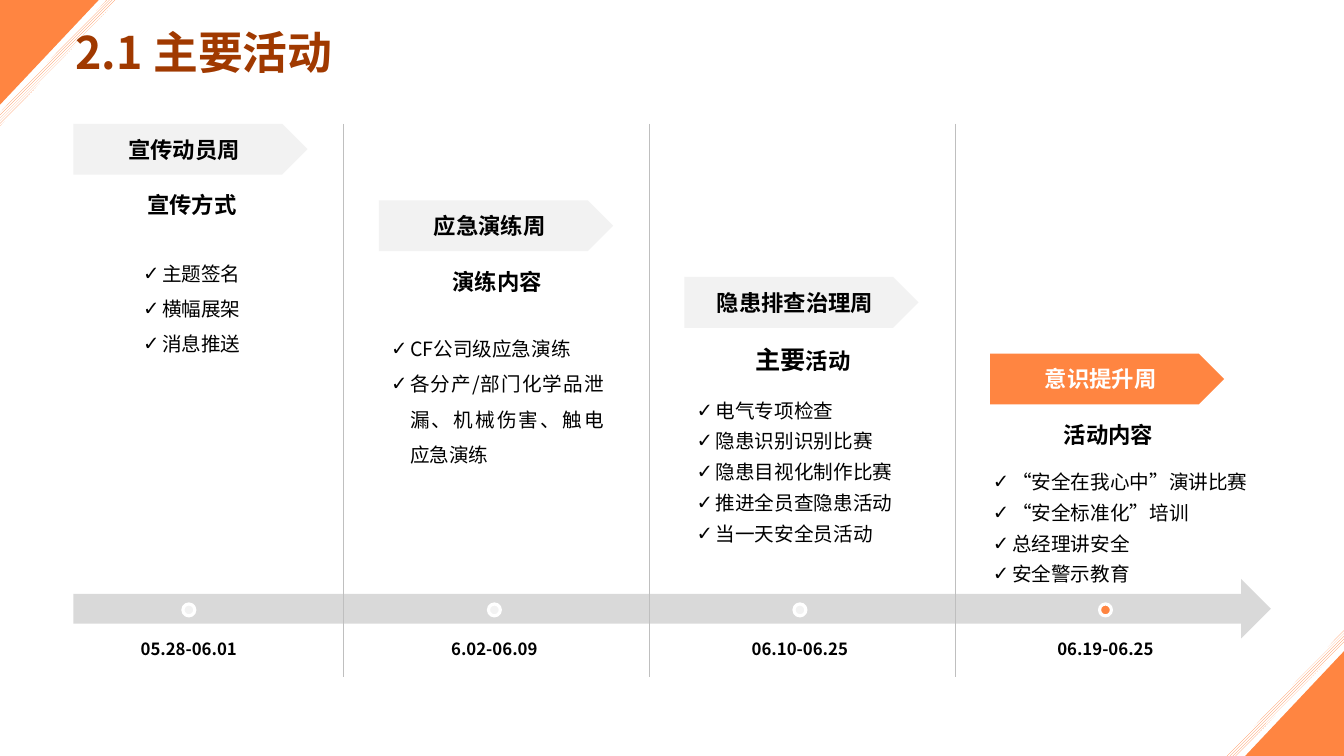
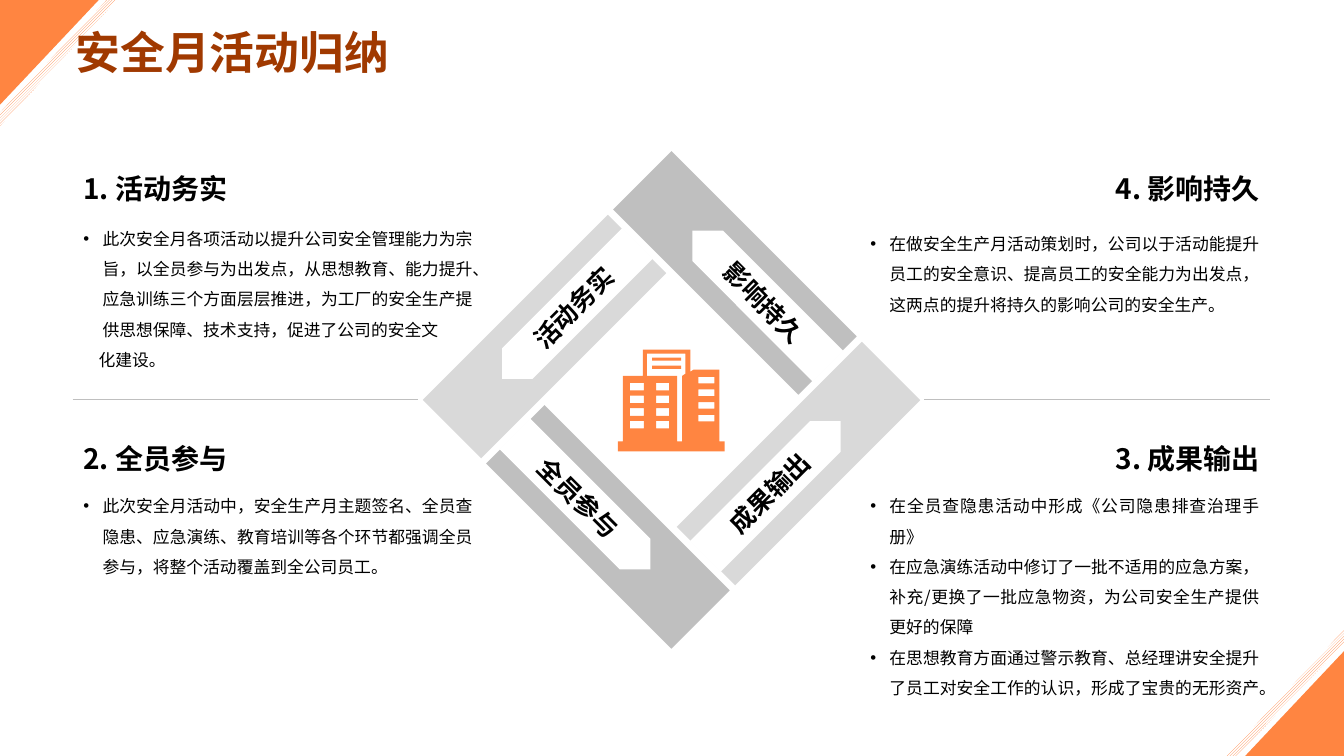
from collections import namedtuple

from lxml import etree
from pptx import Presentation
from pptx.dml.color import RGBColor
from pptx.enum.dml import MSO_PATTERN
from pptx.enum.shapes import MSO_CONNECTOR, MSO_SHAPE
from pptx.enum.text import MSO_ANCHOR, MSO_AUTO_SIZE, PP_ALIGN
from pptx.oxml.ns import qn
from pptx.util import Cm, Pt

LEFT, CENTER, RIGHT, JUSTIFY = (
    PP_ALIGN.LEFT, PP_ALIGN.CENTER, PP_ALIGN.RIGHT, PP_ALIGN.JUSTIFY)
TOP, MIDDLE = MSO_ANCHOR.TOP, MSO_ANCHOR.MIDDLE
RECTANGLE, OVAL = MSO_SHAPE.RECTANGLE, MSO_SHAPE.OVAL
TAG, RIGHT_ARROW = MSO_SHAPE.PENTAGON, MSO_SHAPE.RIGHT_ARROW
STRAIGHT = MSO_CONNECTOR.STRAIGHT
STRIPES = MSO_PATTERN.LIGHT_UPWARD_DIAGONAL

FONT = "Noto Sans CJK SC"
ORANGE, RUST = "FF8541", "A03900"
BLACK, WHITE = "000000", "FFFFFF"
PALE, LIGHT, MID = "F2F2F2", "D9D9D9", "BFBFBF"
SLIDE_W, SLIDE_H = 33.87, 19.05
MARGIN = 1.85
COMPARISON_LAYOUT = 4
HANGING = 0.48

Week = namedtuple("Week", "name dates subhead items list_dx list_dy list_w align spacing")
WEEKS = [
    Week("宣传动员周", "05.28-06.01", [("宣传方式", 16)],
         ["主题签名", "横幅展架", "消息推送"],
         0.05, 3.05, 5.87, CENTER, 1.5),
    Week("应急演练周", "6.02-06.09", [("演练内容", 16)],
         ["CF公司级应急演练", "各分产/部门化学品泄漏、机械伤害、触电应急演练"],
         0.05, 3.02, 5.87, JUSTIFY, 1.5),
    Week("隐患排查治理周", "06.10-06.25", [("主要", 18), ("活动", 16)],
         ["电气专项检查", "隐患识别识别比赛", "隐患目视化制作比赛",
          "推进全员查隐患活动", "当一天安全员活动"],
         0.05, 2.75, 5.87, JUSTIFY, Pt(22)),
    Week("意识提升周", "06.19-06.25", [("活动内容", 16)],
         ["“安全在我心中”演讲比赛", "“安全标准化”培训", "总经理讲安全", "安全警示教育"],
         -0.18, 2.62, 6.96, JUSTIFY, Pt(22)),
]

Result = namedtuple("Result", "heading left top list_dy align items")
RESULTS = [
    Result("1. 活动务实", MARGIN, 4.13, 1.25, LEFT,
           ["此次安全月各项活动以提升公司安全管理能力为宗旨，以全员参与为出发点，"
            "从思想教育、能力提升、应急训练三个方面层层推进，为工厂的安全生产提供"
            "思想保障、技术支持，促进了公司的安全文", "化建设。"]),
    Result("2. 全员参与", MARGIN, 10.94, 1.18, LEFT,
           ["此次安全月活动中，安全生产月主题签名、全员查隐患、应急演练、教育培训等"
            "各个环节都强调全员参与，将整个活动覆盖到全公司员工。"]),
    Result("3. 成果输出", 21.68, 10.94, 1.18, RIGHT,
           ["在全员查隐患活动中形成《公司隐患排查治理手册》",
            "在应急演练活动中修订了一批不适用的应急方案，补充/更换了一批应急物资，"
            "为公司安全生产提供更好的保障",
            "在思想教育方面通过警示教育、总经理讲安全提升了员工对安全工作的认识，"
            "形成了宝贵的无形资产。"]),
    Result("4. 影响持久", 21.68, 4.13, 1.38, RIGHT,
           ["在做安全生产月活动策划时，公司以于活动能提升员工的安全意识、"
            "提高员工的安全能力为出发点，这两点的提升将持久的影响公司的安全生产。"]),
]

# Clockwise from the upper right: label, bar colour, label rotation, flipped
DIAMOND = [("影响持久", MID, 45, True), ("成果输出", LIGHT, 315, False),
           ("全员参与", MID, 45, False), ("活动务实", LIGHT, 315, True)]


def rgb(color):
    return RGBColor.from_string(color)


def style_run(run, size, color=BLACK, bold=False):
    run.font.size, run.font.bold, run.font.name = Pt(size), bold, FONT
    run.font.color.rgb = rgb(color)
    east_asian = etree.SubElement(run.font._element, qn("a:ea"))
    east_asian.set("typeface", FONT)


def write(shape, text, size, color=BLACK, align=CENTER, anchor=MIDDLE):
    """Set one bold line in a shape and return its paragraph."""
    frame = shape.text_frame
    frame.text = text
    frame.word_wrap = True
    frame.vertical_anchor = anchor
    line = frame.paragraphs[0]
    line.alignment = align
    style_run(line.runs[0], size, color, bold=True)
    return line


def move(shape, left, top, width, height):
    shape.left, shape.top = Cm(left), Cm(top)
    shape.width, shape.height = Cm(width), Cm(height)


def add_label(slide, box, text, size, align=CENTER, anchor=MIDDLE):
    label = slide.shapes.add_textbox(*map(Cm, box))
    return write(label, text, size, align=align, anchor=anchor)


def add_block(slide, preset, box, fill):
    block = slide.shapes.add_shape(preset, *map(Cm, box))
    block.shadow.inherit = False
    block.fill.solid()
    block.fill.fore_color.rgb = rgb(fill)
    block.line.fill.background()
    return block


def add_rule(slide, x1, y1, x2, y2):
    rule = slide.shapes.add_connector(STRAIGHT, *map(Cm, (x1, y1, x2, y2)))
    rule.line.color.rgb = rgb(MID)
    rule.line.width = Pt(0.25)
    etree.SubElement(rule.element.spPr, qn("a:effectLst"))


def add_outline(slide, contours):
    """Draw closed contours, given in cm, as one orange shape."""
    builder = None
    for contour in contours:
        start, *rest = [(Cm(x), Cm(y)) for x, y in contour]
        if builder is None:
            builder = slide.shapes.build_freeform(*start)
        else:
            builder.move_to(*start)
        builder.add_line_segments(rest, close=True)
    outline = builder.convert_to_shape()
    outline.shadow.inherit = False
    outline.fill.solid()
    outline.fill.fore_color.rgb = rgb(ORANGE)
    outline.line.fill.background()
    return outline


def fill_list(holder, box, items, size, mark, align, spacing):
    move(holder, *box)
    frame = holder.text_frame
    frame.text = items[0]
    for item in items[1:]:
        frame.add_paragraph().text = item
    frame.auto_size = MSO_AUTO_SIZE.NONE
    frame.word_wrap = True
    frame.vertical_anchor = TOP
    for entry in frame.paragraphs:
        entry.alignment, entry.line_spacing = align, spacing
        entry.space_before = entry.space_after = Pt(0)
        style_run(entry.runs[0], size)
        set_bullet(entry, mark, HANGING, -HANGING)


def set_bullet(entry, mark, margin, indent):
    """Give a paragraph its bullet, or none if mark is empty."""
    props = entry._p.get_or_add_pPr()
    for old in props.findall(qn("a:buChar")):
        props.remove(old)
    props.set("marL", str(Cm(margin)))
    props.set("indent", str(Cm(indent)))
    bullet = etree.SubElement(props, qn("a:buChar" if mark else "a:buNone"))
    if mark:
        bullet.set("char", mark)


def add_corners(slide):
    triangle = [(0, 0), (2.49, 0), (0, 2.64)]
    stripe = [(2.69, 0), (2.95, 0), (0, 3.18), (0, 2.84)]
    for turned in (True, False):
        for points in (triangle, stripe):
            if turned:
                points = [(SLIDE_W - x, SLIDE_H - y) for x, y in points]
            corner = add_outline(slide, [points])
            if len(points) == len(stripe):
                corner.fill.patterned()
                corner.fill.pattern = STRIPES
                corner.fill.fore_color.rgb = rgb(ORANGE)
                corner.fill.back_color.rgb = rgb(WHITE)


def start_slide(deck, title):
    """Add a slide with corners and title; return it and its four list holders."""
    slide = deck.slides.add_slide(deck.slide_layouts[COMPARISON_LAYOUT])
    add_corners(slide)
    heading = slide.shapes.title
    move(heading, 1.65, 0.66, 27.61, 1.57)
    write(heading, title, 32, RUST, LEFT, TOP).line_spacing = 0.9
    heading.text_frame.auto_size = MSO_AUTO_SIZE.NONE
    # Bring the title in front of the corner
    heading.element.getparent().append(heading.element)
    return slide, [slide.placeholders[i] for i in range(1, 5)]


def add_week(slide, holder, week, left, top, current):
    accent = ORANGE if current else PALE
    tag = add_block(slide, TAG, (left, top, 5.9, 1.28), accent)
    write(tag, week.name, 16, WHITE if current else BLACK)

    (text, size), *others = week.subhead
    subhead = add_label(slide, (left + 0.05, top + 1.58, 5.87, 1.14), text, size, anchor=TOP)
    for text, size in others:
        run = subhead.add_run()
        run.text = text
        style_run(run, size, bold=True)

    list_box = (left + week.list_dx, top + week.list_dy, week.list_w, 4.2)
    fill_list(holder, list_box, week.items, 14, "✓", week.align, week.spacing)

    middle = left + 2.91
    marker = add_block(slide, OVAL, (middle - 0.15, 15.22, 0.3, 0.3), accent)
    marker.line.color.rgb = rgb(WHITE)
    marker.line.width = Pt(2.25)
    add_label(slide, (middle - 2, 15.93, 4, 0.86), week.dates, 12)


def add_schedule_slide(deck):
    slide, holders = start_slide(deck, "2.1 主要活动")
    add_block(slide, RIGHT_ARROW, (MARGIN, 14.59, 30.18, 1.5), LIGHT)
    pitch, first_top, step = 7.7, 3.12, 1.93
    last = len(WEEKS) - 1
    for i, (holder, week) in enumerate(zip(holders, WEEKS)):
        left = MARGIN + i * pitch
        add_week(slide, holder, week, left, first_top + i * step, i == last)
        if i < last:
            add_rule(slide, left + 6.81, first_top, left + 6.81, 17.07)


def add_building(slide, left, top, width):
    """Draw an office building on a grid 106 units wide."""
    def pane(x1, y1, x2, y2):
        return [(x1, y1), (x1, y2), (x2, y2), (x2, y1)]

    walls = [(25, 0), (72, 0), (72, 22), (75, 20), (101, 20), (101, 91), (106, 91),
             (106, 101), (0, 101), (0, 91), (5, 91), (5, 26), (25, 26)]
    gap = [(29, 4), (29, 26), (59, 26), (59, 91), (64, 91), (64, 26), (67, 24), (67, 4)]
    contours = [walls, gap, pane(34, 8, 63, 11), pane(34, 16, 63, 19)]
    for x1, x2, y, height in ((12, 26, 33, 7.5), (38, 51, 33, 7.5), (80, 96, 27, 6.5)):
        for floor in range(4):
            sill = y + 12.6 * floor
            contours.append(pane(x1, sill, x2, sill + height))
    unit = width / 106
    add_outline(slide, [[(left + x * unit, top + y * unit) for x, y in contour]
                        for contour in contours])


def add_diamond(slide, center_x, center_y):
    """Set four bars and their labels, each a quarter turn after the last."""
    def place(preset, offset, width, height, fill, rotation):
        x, y = center_x + offset[0], center_y + offset[1]
        part = add_block(slide, preset, (x - width / 2, y - height / 2, width, height), fill)
        part.rotation = rotation
        return part

    bar_at, tag_at = (1.6, -3.2), (2.24, -2.56)
    for i, (text, fill, rotation, flipped) in enumerate(DIAMOND):
        place(RECTANGLE, bar_at, 6.6, 2.08, fill, 45 + 90 * (i % 2))
        tag = place(TAG, tag_at, 4.83, 1.09, WHITE, rotation)
        if flipped:
            tag.element.spPr.xfrm.set("flipH", "1")
        write(tag, text, 18)
        bar_at, tag_at = [(-y, x) for x, y in (bar_at, tag_at)]
    add_building(slide, center_x - 1.35, center_y - 1.27, 2.69)


def add_result(slide, holder, result):
    width = 10.32
    add_label(slide, (result.left, result.top, width, 1.22), result.heading, 20, result.align)
    list_box = (result.left, result.top + result.list_dy, width, 4.5)
    fill_list(holder, list_box, result.items, 12, "•", JUSTIFY, 1.5)


def add_summary_slide(deck):
    slide, holders = start_slide(deck, "安全月活动归纳")
    add_diamond(slide, 16.92, 10.08)
    for holder, result in zip(holders, RESULTS):
        add_result(slide, holder, result)
    set_bullet(holders[0].text_frame.paragraphs[-1], "", 0.38, 0)
    for left in (1.83, 23.29):
        add_rule(slide, left, 10.06, left + 8.71, 10.06)


def main():
    deck = Presentation()
    deck.slide_width, deck.slide_height = Cm(SLIDE_W), Cm(SLIDE_H)
    add_schedule_slide(deck)
    add_summary_slide(deck)
    deck.save("out.pptx")


if __name__ == "__main__":
    main()
